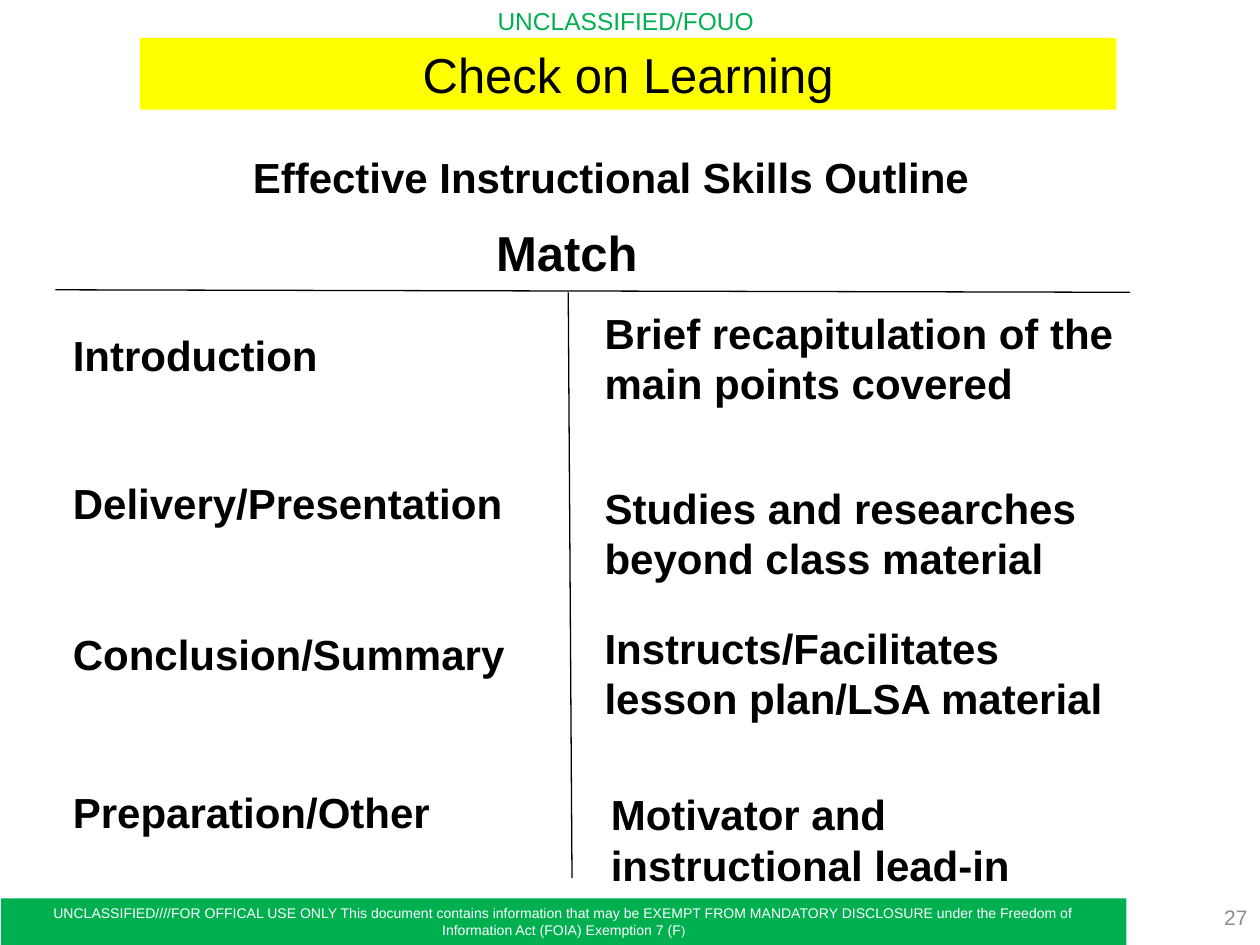
from pptx import Presentation
from pptx.dml.color import RGBColor
from pptx.enum.shapes import MSO_CONNECTOR, MSO_SHAPE
from pptx.enum.text import MSO_ANCHOR, MSO_AUTO_SIZE, PP_ALIGN
from pptx.oxml.ns import qn
from pptx.util import Inches, Pt
from lxml import etree

LINE, RECT = MSO_CONNECTOR.STRAIGHT, MSO_SHAPE.RECTANGLE
LEFT, MID, RIGHT = PP_ALIGN.LEFT, PP_ALIGN.CENTER, PP_ALIGN.RIGHT
TOP, CENTER = MSO_ANCHOR.TOP, MSO_ANCHOR.MIDDLE
FIXED = MSO_AUTO_SIZE.NONE
BLACK = RGBColor(0, 0, 0)
WHITE = RGBColor(255, 255, 255)
GREEN = RGBColor(0x00, 0xB0, 0x50)
YELLOW = RGBColor(255, 255, 0)
GRAY = RGBColor(0x8C, 0x8C, 0x8C)

# Content
TITLE = "Check on Learning"
MARK = "UNCLASSIFIED/FOUO"
NOTICE = ("UNCLASSIFIED////FOR OFFICAL USE ONLY This document contains "
          "information that may be EXEMPT FROM MANDATORY DISCLOSURE under "
          "the Freedom of Information Act (FOIA) Exemption 7 (F")
NUMBER = "27"
HEADS = [  # text, box, size, alignment
    ("Effective Instructional Skills Outline", (1.88, 1.15, 5.94, 0.5),
     24, MID),
    ("Match", (3.84, 1.72, 1.34, 0.57), 28, LEFT),
]
TERMS = [  # text, top
    ("Introduction", 2.57),
    ("Delivery/Presentation", 3.74),
    ("Conclusion/Summary", 4.94),
    ("Preparation/Other", 6.19),
]
MEANINGS = [  # lines, left, top, width
    (["Brief recapitulation of the main points covered"], 4.7, 2.39, 5),
    (["Studies and researches beyond class material"], 4.7, 3.78, 5),
    (["Instructs/Facilitates lesson plan/LSA material"], 4.7, 4.89, 4.43),
    (["Motivator and", "instructional lead-in"], 4.75, 6.21, 3.6),
]
RULES = [(0.44, 2.3, 8.97, 2.32), (4.51, 2.32, 4.54, 6.97)]

deck = Presentation()
deck.slide_width, deck.slide_height = Inches(10), Inches(7.5)
slide = deck.slides.add_slide(deck.slide_layouts[5])


def write(lines, box, shape=None, size=24, bold=True, color=BLACK,
          align=LEFT, anchor=TOP, wrap=True, pad=0.1):
    """Set lines of text in a shape, or in a new text box."""
    place = [Inches(n) for n in box]
    if shape is None:
        shape = slide.shapes.add_textbox(*place)
    shape.left, shape.top, shape.width, shape.height = place
    frame = shape.text_frame
    frame.auto_size = FIXED
    frame.word_wrap = wrap
    frame.vertical_anchor = anchor
    frame.margin_left = frame.margin_right = Inches(pad)
    frame.text = "\n".join(lines)
    for para in frame.paragraphs:
        para.alignment = align
        for run in para.runs:
            font = run.font
            font.name, font.size, font.bold = "Arial", Pt(size), bold
            font.color.rgb = color
    return shape


# Marking, notice bar and page number
write([MARK], (3.85, 0, 2.29, 0.34), size=14, bold=False, color=GREEN,
      wrap=False)
bar = slide.shapes.add_shape(RECT, 0, 0, 0, 0)
bar.shadow.inherit = False
bar.fill.solid()
bar.fill.fore_color.rgb = GREEN
bar.line.fill.background()
write([NOTICE], (0.01, 7.13, 8.93, 0.37), shape=bar, size=8, bold=False,
      color=WHITE, align=MID, pad=0.3)
end = bar.text_frame.paragraphs[0].add_run()
end.text = ")"
end.font.name, end.font.size = "Arial", Pt(7)
end.font.color.rgb = WHITE
write([NUMBER], (7.67, 7.08, 2.33, 0.4), size=12, bold=False, color=GRAY,
      align=RIGHT, anchor=CENTER)

# Title and headings
title = slide.shapes.title
title.fill.solid()
title.fill.fore_color.rgb = YELLOW
write([TITLE], (1.11, 0.3, 7.75, 0.57), shape=title, size=28, bold=False,
      align=MID)
for text, box, size, align in HEADS:
    write([text], box, size=size, align=align, wrap=False)

# Two columns to match
for text, top in TERMS:
    write([text], (0.48, top, 3.8, 0.5))
for lines, left, top, width in MEANINGS:
    write(lines, (left, top, width, 0.91))

# Dividing lines
for ends in RULES:
    rule = slide.shapes.add_connector(LINE, *[Inches(n) for n in ends])
    rule.line.color.rgb = BLACK
    rule.line.width = Pt(0.75)
    etree.SubElement(rule.element.spPr, qn("a:effectLst"))

deck.save("out.pptx")
